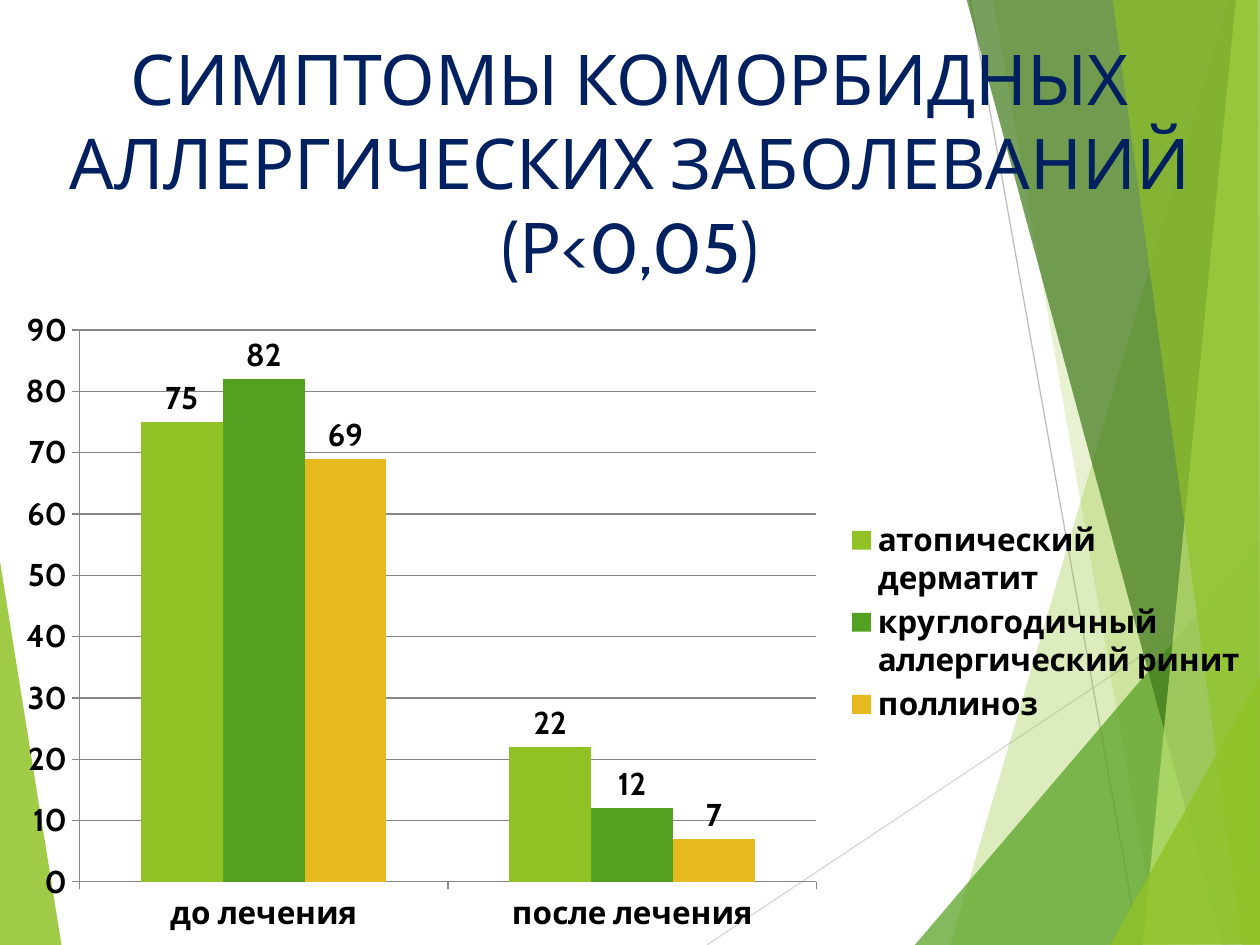
import pptx
import pptx.chart.data
import pptx.dml.color
import pptx.enum.chart
import pptx.enum.shapes
import pptx.enum.text
import pptx.oxml
import pptx.oxml.ns
import pptx.util

Inches = pptx.util.Inches
Pt = pptx.util.Pt
qn = pptx.oxml.ns.qn

THEME = {
    "font": "Cabin", "title": 40, "body": 18,
    "navy": "002060", "black": "000000", "axis": "868686",
    "lime": "90C226", "green": "54A021", "gold": "E6B91E",
    "dark": "3F7819", "pale": "C0E474",
}
TITLE = "СИМПТОМЫ КОМОРБИДНЫХ АЛЛЕРГИЧЕСКИХ ЗАБОЛЕВАНИЙ (Р<0,05)"
CATS = [" до лечения ", "после лечения"]
SERIES = [
    ("атопический дерматит", (75, 22), "lime"),
    ("круглогодичный аллергический ринит", (82, 12), "green"),
    ("поллиноз", (69, 7), "gold"),
]
# left, top, width, height in inches; the parts lie inside the chart
CHART = (0, 2.36, 10, 5.14)
PLOT = (0.63, 0.26, 5.85, 4.38)
LEGEND = (6.7, 1.73, 3.2, 1.7)
# colour, opacity in percent, corners
LEFT = [("lime", 85, [(-0.01, 4.39), (0.49, 7.51), (-0.01, 7.5)])]
RAYS = [
    ((5.61, 7.5), (10.01, 4.57), "D9D9D9"),
    ((7.7, 0), (9.04, 7.5), "BFBFBF"),
]
RIGHT = [
    ("lime", 30, [(9.75, 0), (7.54, 7.5), (10.02, 7.51), (10.01, 0.01)]),
    ("lime", 20, [(7.88, -0.01), (9.19, 7.5), (10.01, 7.5), (10.01, -0.01)]),
    ("green", 72, [(7.26, 7.5), (10, 4.29), (10.01, 7.5)]),
    ("dark", 70, [(7.67, -0.01), (9.7, 7.5), (10.01, 7.49), (10.01, -0.01)]),
    ("pale", 70, [(9.81, -0.01), (9.07, 7.5), (10.01, 7.5), (10, -0.01)]),
    ("lime", 65, [(8.83, -0.01), (9.86, 7.5), (10, 7.5), (9.98, -0.01)]),
    ("lime", 80, [(8.81, 7.5), (10.01, 5.35), (10.01, 7.49)]),
]


def tint(name):
    return pptx.dml.color.RGBColor.from_string(THEME.get(name, name))


def add_facet(slide, color, alpha, points):
    start, *rest = [(Inches(x), Inches(y)) for x, y in points]
    pen = slide.shapes.build_freeform(*start)
    pen.add_line_segments(rest, close=True)
    shape = pen.convert_to_shape()
    shape.shadow.inherit = False
    shape.line.fill.background()
    shape.fill.solid()
    shape.fill.fore_color.rgb = tint(color)
    node = shape._element.spPr.find(".//" + qn("a:srgbClr"))
    node.append(pptx.oxml.parse_xml(
        f'<a:alpha {pptx.oxml.ns.nsdecls("a")} val="{alpha * 1000}"/>'))


def add_ray(slide, start, end, color):
    ray = slide.shapes.add_connector(
        pptx.enum.shapes.MSO_CONNECTOR.STRAIGHT,
        *map(Inches, start + end))
    ray.line.color.rgb = tint(color)
    ray.line.width = Pt(0.75)
    ray._element.spPr.append(pptx.oxml.parse_xml(
        f'<a:effectLst {pptx.oxml.ns.nsdecls("a")}/>'))


def add_title(slide):
    box = slide.shapes.add_textbox(
        Inches(0), Inches(0.23), Inches(10), Inches(1.88))
    frame = box.text_frame
    frame.word_wrap = True
    frame.vertical_anchor = pptx.enum.text.MSO_ANCHOR.TOP
    para = frame.paragraphs[0]
    para.alignment = pptx.enum.text.PP_ALIGN.CENTER
    run = para.add_run()
    run.text = TITLE
    style(run.font, "title", "navy", False)


def style(font, size="body", color="black", bold=True):
    font.name = THEME["font"]
    font.size = Pt(THEME[size])
    font.color.rgb = tint(color)
    font.bold = bold


def set_place(node, index, place, inner=False):
    """Fix a chart part at a place given in inches from the chart's corner."""
    for old in node.findall(qn("c:layout")):
        node.remove(old)
    target = '<c:layoutTarget val="inner"/>' if inner else ""
    modes = '<c:xMode val="edge"/><c:yMode val="edge"/>'
    sizes = "".join(f'<c:{key} val="{part / whole:.4f}"/>'
                    for key, part, whole in zip("xywh", place, CHART[2:] * 2))
    node.insert(index, pptx.oxml.parse_xml(
        f'<c:layout {pptx.oxml.ns.nsdecls("c")}><c:manualLayout>'
        f'{target}{modes}{sizes}</c:manualLayout></c:layout>'))


def add_bars(slide):
    kinds = pptx.enum.chart
    data = pptx.chart.data.CategoryChartData()
    data.categories = CATS
    for name, vals, _ in SERIES:
        data.add_series(name, vals)
    chart = slide.shapes.add_chart(
        kinds.XL_CHART_TYPE.COLUMN_CLUSTERED,
        *map(Inches, CHART), data).chart
    chart.has_title = False
    style(chart.font, bold=False)

    plot = chart.plots[0]
    plot.vary_by_categories = False
    plot.gap_width = 150
    plot.overlap = 0
    for bars, (_, _, color) in zip(plot.series, SERIES):
        bars.format.fill.solid()
        bars.format.fill.fore_color.rgb = tint(color)
        labels = bars.data_labels
        labels.show_value = True
        labels.position = kinds.XL_LABEL_POSITION.OUTSIDE_END
        style(labels.font)

    scale = chart.value_axis
    scale.minimum_scale, scale.maximum_scale, scale.major_unit = 0, 90, 10
    scale.has_major_gridlines = True
    for axis in (chart.category_axis, scale):
        axis.major_tick_mark = kinds.XL_TICK_MARK.OUTSIDE
        style(axis.tick_labels.font)
    for part in (chart.category_axis, scale, scale.major_gridlines):
        part.format.line.color.rgb = tint("axis")
        part.format.line.width = Pt(0.75)

    chart.has_legend = True
    legend = chart.legend
    legend.position = kinds.XL_LEGEND_POSITION.RIGHT
    legend.include_in_layout = False
    style(legend.font)
    set_place(legend._element, 1, LEGEND)
    set_place(plot._element.getparent(), 0, PLOT, True)


def main():
    deck = pptx.Presentation()
    deck.slide_width, deck.slide_height = Inches(10), Inches(7.5)
    slide = deck.slides.add_slide(deck.slide_layouts[6])
    for facet in LEFT:
        add_facet(slide, *facet)
    for ray in RAYS:
        add_ray(slide, *ray)
    for facet in RIGHT:
        add_facet(slide, *facet)
    add_title(slide)
    add_bars(slide)
    deck.save("out.pptx")


if __name__ == "__main__":
    main()
